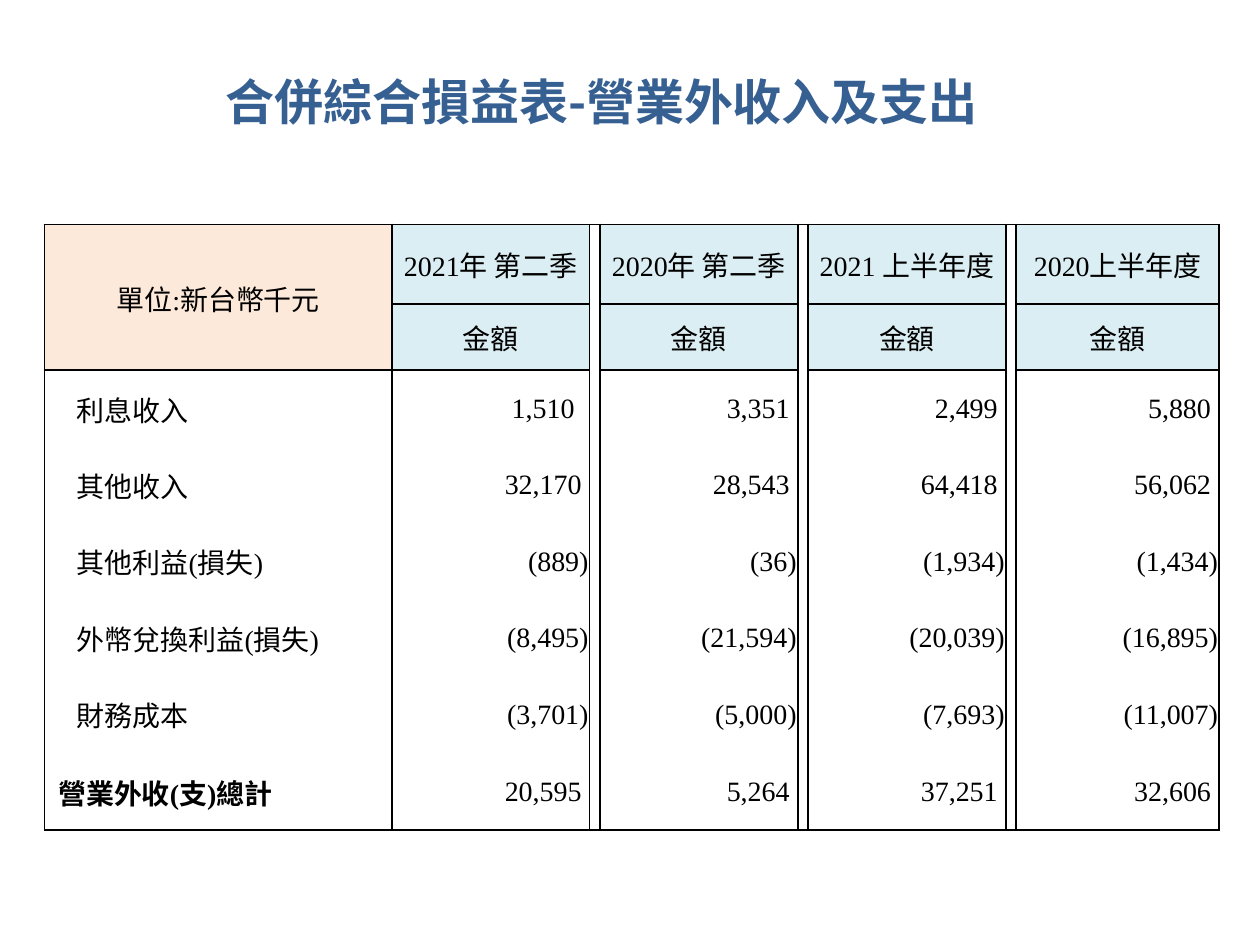
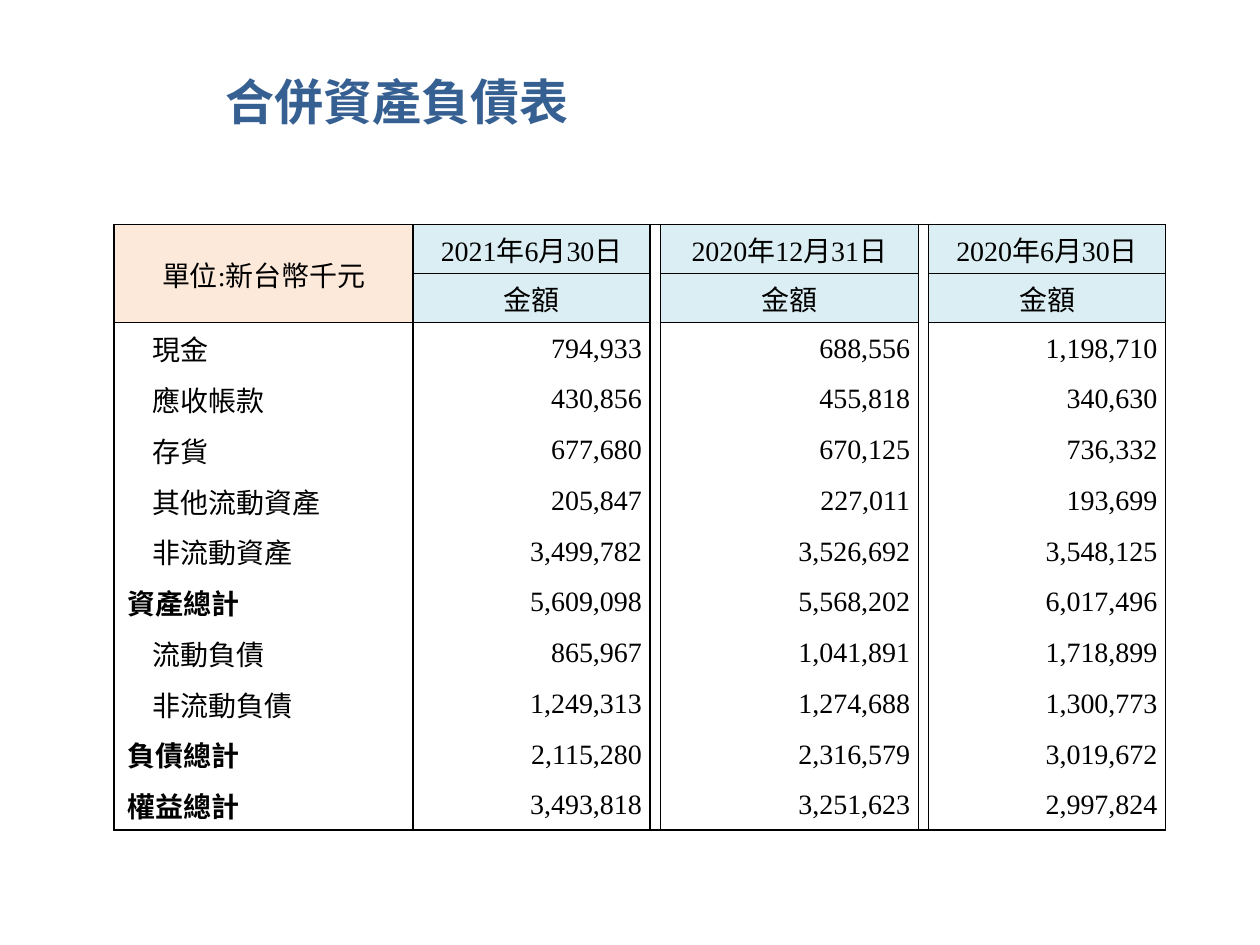
from lxml import etree
from pptx import Presentation
from pptx.dml.color import RGBColor
from pptx.enum.text import MSO_ANCHOR, MSO_AUTO_SIZE, PP_ALIGN
from pptx.oxml.ns import qn
from pptx.util import Pt

LEFT, CENTER, RIGHT = PP_ALIGN.LEFT, PP_ALIGN.CENTER, PP_ALIGN.RIGHT
TOP, MIDDLE = MSO_ANCHOR.TOP, MSO_ANCHOR.MIDDLE
NO_AUTOFIT = MSO_AUTO_SIZE.NONE

COLORS = {
    "title": "376092",
    "text": "000000",
    "border": "000000",
    "unit": "FDE9D9",
    "period": "DBEEF3",
}
SERIF = "Times New Roman"
SANS = "Noto Sans CJK SC"
TITLE_FORMAT = {"size": Pt(28), "bold": True, "name": SANS}
CELL_FORMAT = {"size": Pt(16), "bold": False, "name": SERIF}
TOTAL_FORMAT = {**CELL_FORMAT, "bold": True}
CELL_MARGIN = 0.7
SPACE_WIDTH = 4
TOTAL_INDENT = 7.9
HEADER_ROWS = 2
BORDER_WIDTH = Pt(1)

INCOME = {
    "title": "合併綜合損益表-營業外收入及支出",
    "title_box": (121.7, 37.4, 584, 41),
    "origin": (25.4, 128.2),
    "columns": [198.6, 113, 5.9, 113, 5.9, 113, 5.9, 116],
    "rows": [45.4, 37.9] + [43.7] * 5 + [44.5],
    "indent": 18.6,
    "periods": ["2021年 第二季", "2020年 第二季", "2021 上半年度", "2020上半年度"],
    "items": [
        ("利息收入", "1,510", "3,351", "2,499", "5,880"),
        ("其他收入", "32,170", "28,543", "64,418", "56,062"),
        ("其他利益(損失)", "(889)", "(36)", "(1,934)", "(1,434)"),
        ("外幣兌換利益(損失)", "(8,495)", "(21,594)", "(20,039)", "(16,895)"),
        ("財務成本", "(3,701)", "(5,000)", "(7,693)", "(11,007)"),
        ("營業外收(支)總計", "20,595", "5,264", "37,251", "32,606"),
    ],
    "wide_margin_cells": {(2, 1)},
}
BALANCE = {
    "title": "合併資產負債表",
    "title_box": (121.7, 37.4, 481.7, 65.5),
    "origin": (65.2, 128.2),
    "columns": [170.9, 135.4, 5.9, 147.4, 5.9, 135.4],
    "rows": [28.1] * 2 + [29] * 10,
    "indent": 22.2,
    "periods": ["2021年6月30日", "2020年12月31日", "2020年6月30日"],
    "items": [
        ("現金", "794,933", "688,556", "1,198,710"),
        ("應收帳款", "430,856", "455,818", "340,630"),
        ("存貨", "677,680", "670,125", "736,332"),
        ("其他流動資產", "205,847", "227,011", "193,699"),
        ("非流動資產", "3,499,782", "3,526,692", "3,548,125"),
        ("資產總計", "5,609,098", "5,568,202", "6,017,496"),
        ("流動負債", "865,967", "1,041,891", "1,718,899"),
        ("非流動負債", "1,249,313", "1,274,688", "1,300,773"),
        ("負債總計", "2,115,280", "2,316,579", "3,019,672"),
        ("權益總計", "3,493,818", "3,251,623", "2,997,824"),
    ],
    "wide_margin_cells": set(),
}


def set_attributes(target, values):
    for name, value in values.items():
        setattr(target, name, value)


def write_text(paragraph, text, font_format, color, alignment=LEFT):
    paragraph.alignment = alignment
    run = paragraph.add_run()
    run.text = text
    set_attributes(run.font, font_format)
    run.font.color.rgb = RGBColor.from_string(COLORS[color])
    east_asian = etree.SubElement(run.font._element, qn("a:ea"))
    east_asian.set("typeface", SANS)


def add_title(slide, text, box):
    title = slide.shapes.title
    left, top, width, height = map(Pt, box)
    set_attributes(title, {"left": left, "top": top, "width": width, "height": height})
    frame = title.text_frame
    set_attributes(frame, {"word_wrap": True, "auto_size": NO_AUTOFIT, "vertical_anchor": TOP})
    write_text(frame.paragraphs[0], text, TITLE_FORMAT, "title")


def set_borders(cell, edges):
    properties = cell._tc.get_or_add_tcPr()
    for edge, visible in edges.items():
        line = etree.SubElement(properties, qn(f"a:ln{edge}"))
        if visible:
            line.set("w", str(BORDER_WIDTH))
            fill = etree.SubElement(line, qn("a:solidFill"))
            etree.SubElement(fill, qn("a:srgbClr")).set("val", COLORS["border"])
        else:
            etree.SubElement(line, qn("a:noFill"))


def style_cell(cell, row, column, last_row):
    set_attributes(cell, {
        "margin_left": Pt(CELL_MARGIN),
        "margin_right": Pt(CELL_MARGIN),
        "margin_top": Pt(CELL_MARGIN),
        "margin_bottom": 0,
        "vertical_anchor": MIDDLE,
    })
    is_gap = column > 0 and column % 2 == 0
    set_borders(cell, {
        "L": True,
        "R": True,
        "T": row == 0 or (not is_gap and row <= HEADER_ROWS),
        "B": row == last_row or (not is_gap and row < HEADER_ROWS),
    })
    if row < HEADER_ROWS and not is_gap:
        cell.fill.solid()
        color = COLORS["period" if column else "unit"]
        cell.fill.fore_color.rgb = RGBColor.from_string(color)
    else:
        cell.fill.background()


def fill_cell(cell, text, alignment, font_format=CELL_FORMAT):
    write_text(cell.text_frame.paragraphs[0], text, font_format, "text", alignment)


def fill_header(table, periods):
    table.cell(0, 0).merge(table.cell(HEADER_ROWS - 1, 0))
    fill_cell(table.cell(0, 0), "單位:新台幣千元", CENTER)
    for index, period in enumerate(periods):
        fill_cell(table.cell(0, 2 * index + 1), period, CENTER)
        fill_cell(table.cell(1, 2 * index + 1), "金額", CENTER)


def fill_items(table, statement):
    for row, (label, *amounts) in enumerate(statement["items"], HEADER_ROWS):
        is_total = label.endswith("總計")
        label_cell = table.cell(row, 0)
        label_cell.margin_left = Pt(TOTAL_INDENT if is_total else statement["indent"])
        fill_cell(label_cell, label, LEFT, TOTAL_FORMAT if is_total else CELL_FORMAT)
        for index, amount in enumerate(amounts):
            column = 2 * index + 1
            spaces = 0 if amount.endswith(")") else 1
            if (row, column) in statement["wide_margin_cells"]:
                spaces += 1
            amount_cell = table.cell(row, column)
            amount_cell.margin_right = Pt(CELL_MARGIN + spaces * SPACE_WIDTH)
            fill_cell(amount_cell, amount, RIGHT)


def add_statement_table(slide, statement):
    widths, heights = statement["columns"], statement["rows"]
    left, top = statement["origin"]
    box = map(Pt, (left, top, sum(widths), sum(heights)))
    table = slide.shapes.add_table(len(heights), len(widths), *box).table
    set_attributes(table, {"first_row": False, "horz_banding": False})
    for column, width in zip(table.columns, widths):
        column.width = Pt(width)
    for row, height in zip(table.rows, heights):
        row.height = Pt(height)
    for row in range(len(heights)):
        for column in range(len(widths)):
            style_cell(table.cell(row, column), row, column, len(heights) - 1)
    fill_header(table, statement["periods"])
    fill_items(table, statement)


def add_statement_slide(presentation, statement):
    slide = presentation.slides.add_slide(presentation.slide_layouts[5])
    add_title(slide, statement["title"], statement["title_box"])
    add_statement_table(slide, statement)


def main():
    presentation = Presentation()
    set_attributes(presentation, {"slide_width": Pt(720), "slide_height": Pt(540)})
    for statement in (INCOME, BALANCE):
        add_statement_slide(presentation, statement)
    presentation.save("out.pptx")


if __name__ == "__main__":
    main()
